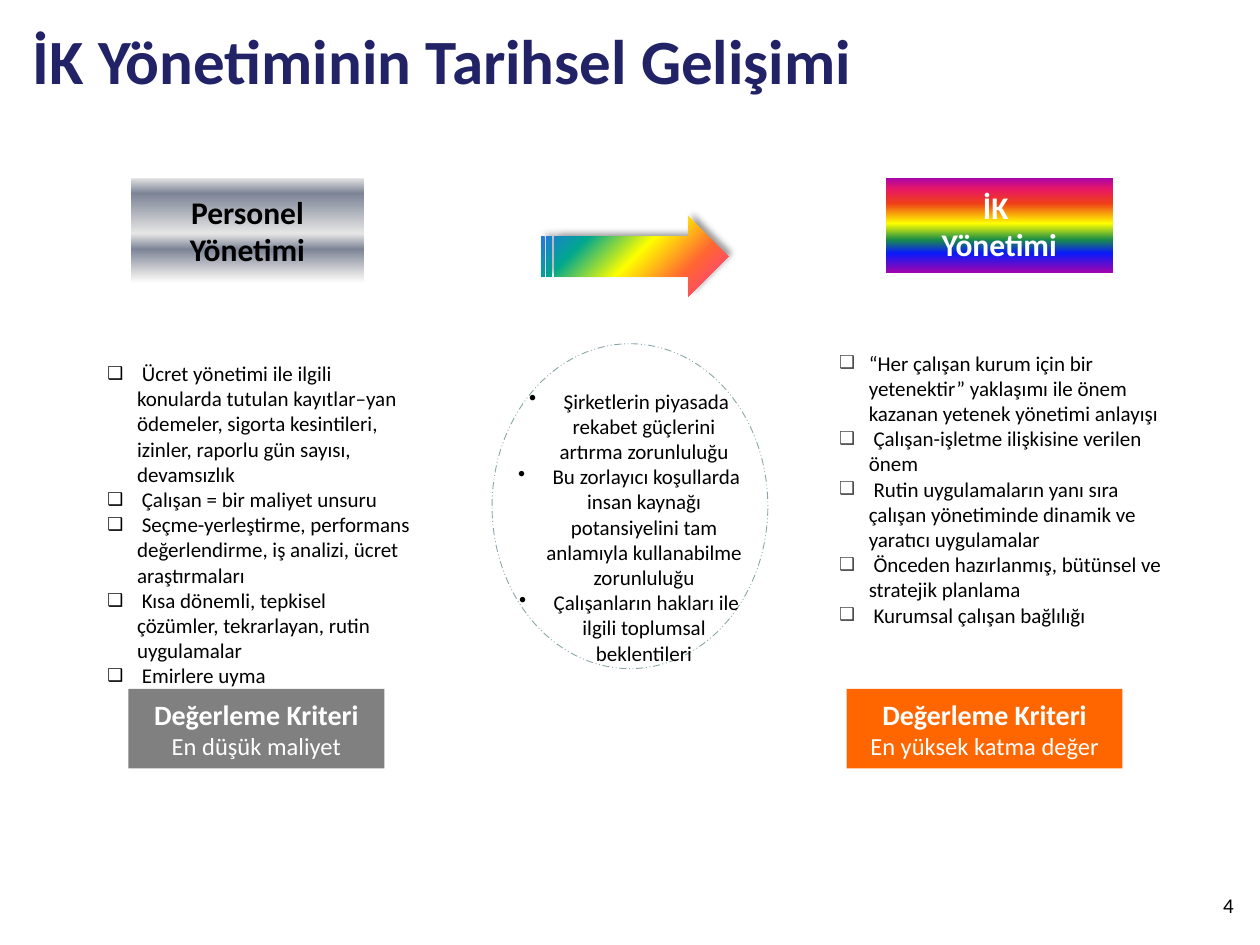
from lxml.etree import SubElement
from pptx import Presentation
from pptx.dml.color import RGBColor
from pptx.enum.dml import MSO_LINE
from pptx.enum.shapes import MSO_SHAPE as Shape
from pptx.enum.text import MSO_ANCHOR as Anchor, MSO_AUTO_SIZE as AutoSize, PP_ALIGN as Align
from pptx.oxml import parse_xml
from pptx.oxml.ns import nsdecls, qn
from pptx.util import Cm, Pt

FONT = "Calibri"
BLACK = RGBColor(0x00, 0x00, 0x00)
WHITE = RGBColor(0xFF, 0xFF, 0xFF)
NAVY = RGBColor(0x22, 0x22, 0x67)
GREY = RGBColor(0x80, 0x80, 0x80)
ORANGE = RGBColor(0xFF, 0x66, 0x00)
SAGE = RGBColor(0x8A, 0xA6, 0xA8)
CHARCOAL = RGBColor(0x40, 0x40, 0x40)

SILVER = [(0, "FFFFFF"), (7, "E6E6E6"), (32, "7D8496"), (47, "E6E6E6"),
          (85, "7D8496"), (100, "E6E6E6")]
RAINBOW = [(0, "A603AB"), (21, "0819FB"), (35, "1A8D48"), (52, "FFFF00"),
           (73, "EE3F17"), (88, "E81766"), (100, "A603AB")]
SUNSET = [(0, "FF3399"), (25, "FF6633"), (50, "FFFF00"), (75, "01A78F"), (100, "3366FF")]
UPWARD = '<a:lin ang="16200000" scaled="0"/>'
FROM_CORNER = '<a:path path="circle"><a:fillToRect l="100000" t="100000"/></a:path>'

# Boxes are (left, top, width, height) in centimetres.
TITLE = ("İK Yönetiminin Tarihsel Gelişimi", (0.41, 0.2, 22.23, 1.98))
HEADINGS = [
    (["Personel Yönetimi"], (2.64, 3.58, 4.7, 2.13), SILVER, BLACK),
    (["İK ", "Yönetimi"], (17.86, 3.58, 4.57, 1.93), RAINBOW, WHITE),
]
ARROW_BOX = (10.92, 4.37, 3.76, 1.6)
OVAL_BOX = (9.92, 6.93, 5.56, 6.55)
PERSONNEL = ([
    " Ücret yönetimi ile ilgili konularda tutulan kayıtlar–yan ödemeler, "
    "sigorta kesintileri, izinler, raporlu gün sayısı, devamsızlık",
    " Çalışan = bir maliyet unsuru",
    " Seçme-yerleştirme, performans değerlendirme, iş analizi, ücret araştırmaları",
    " Kısa dönemli, tepkisel çözümler, tekrarlayan, rutin uygulamalar",
    " Emirlere uyma",
], (1.91, 7.14, 6.63, 5.89), BLACK)
HUMAN_RESOURCES = ([
    "“Her çalışan kurum için bir yetenektir” yaklaşımı ile önem kazanan "
    "yetenek yönetimi anlayışı",
    " Çalışan-işletme ilişkisine verilen önem",
    " Rutin uygulamaların yanı sıra çalışan yönetiminde dinamik ve yaratıcı uygulamalar",
    " Önceden hazırlanmış, bütünsel ve stratejik planlama",
    " Kurumsal çalışan bağlılığı",
], (16.66, 6.93, 7.34, 5.89), CHARCOAL)
PRESSURES = ([
    " Şirketlerin piyasada rekabet güçlerini artırma zorunluluğu",
    " Bu zorlayıcı koşullarda insan kaynağı potansiyelini tam anlamıyla "
    "kullanabilme zorunluluğu",
    " Çalışanların hakları ile ilgili toplumsal beklentileri",
], (10.13, 7.7, 5.11, 5.26))
CRITERION = "Değerleme Kriteri"
CRITERIA = [
    ("En düşük maliyet", (2.59, 13.89, 5.16, 1.6), GREY),
    ("En yüksek katma değer", (17.07, 13.89, 5.56, 1.6), ORANGE),
]
PAGE_NUMBER = ("4", (24.41, 17.86, 0.74, 0.76))


def place(shape, box):
    shape.left, shape.top, shape.width, shape.height = map(Cm, box)


def add_bullet(para, mark, color, percent):
    """Give the paragraph a hanging bullet of the given size and colour."""
    props = para._p.get_or_add_pPr()
    indent = Cm(0.6)
    props.set("marL", str(indent))
    props.set("indent", str(-indent))
    tint = SubElement(props, qn("a:buClr"))
    SubElement(tint, qn("a:srgbClr"), val=str(color))
    SubElement(props, qn("a:buSzPct"), val=str(percent * 1000))
    SubElement(props, qn("a:buChar"), char=mark)


def write(shape, lines, sizes=(12,), bolds=(False,), color=BLACK, align=Align.LEFT,
          anchor=Anchor.TOP, wrap=True, mark=None, mark_color=BLACK, mark_percent=100):
    """Fill the shape, one paragraph a line; sizes and bolds repeat their last value."""
    frame = shape.text_frame
    frame.auto_size = AutoSize.NONE
    frame.word_wrap = wrap
    frame.vertical_anchor = anchor
    for index, line in enumerate(lines):
        para = frame.add_paragraph() if index else frame.paragraphs[0]
        para.alignment = align
        para.space_before = Pt(0)
        if mark:
            add_bullet(para, mark, mark_color, mark_percent)
        span = para.add_run()
        span.text = line
        span.font.name = FONT
        span.font.size = Pt(sizes[min(index, len(sizes) - 1)])
        span.font.bold = bolds[min(index, len(bolds) - 1)]
        span.font.color.rgb = color


def add_plain_shape(page, kind, box, fill=None):
    shape = page.shapes.add_shape(kind, *map(Cm, box))
    shape.shadow.inherit = False
    shape.line.fill.background()
    if fill is not None:
        shape.fill.solid()
        shape.fill.fore_color.rgb = fill
    return shape


def fill_gradient(shape, stops, direction):
    marks = "".join(f'<a:gs pos="{position * 1000}"><a:srgbClr val="{color}"/></a:gs>'
                    for position, color in stops)
    gradient = parse_xml(f'<a:gradFill {nsdecls("a")} rotWithShape="1">'
                         f'<a:gsLst>{marks}</a:gsLst>{direction}</a:gradFill>')
    shape._element.spPr.find(qn("a:prstGeom")).addnext(gradient)


def add_shadow(shape):
    effects = shape._element.spPr.find(qn("a:effectLst"))
    shadow = SubElement(effects, qn("a:outerShdw"), blurRad=str(Pt(4)), dist=str(Pt(3)),
                        dir=str(315 * 60000), algn="bl", rotWithShape="0")
    tint = SubElement(shadow, qn("a:srgbClr"), val=str(BLACK))
    SubElement(tint, qn("a:alpha"), val="40000")


def main():
    deck = Presentation()
    deck.slide_width, deck.slide_height = Cm(25.4), Cm(19.05)
    page = deck.slides.add_slide(deck.slide_layouts.get_by_name("Two Content"))
    title, left_list, right_list = page.placeholders

    text, box = TITLE
    place(title, box)
    write(title, [text], sizes=(36,), bolds=(True,), color=NAVY, anchor=Anchor.MIDDLE)

    for holder, (lines, box, mark_color) in ((left_list, PERSONNEL),
                                             (right_list, HUMAN_RESOURCES)):
        place(holder, box)
        write(holder, lines, mark="❑", mark_color=mark_color, mark_percent=85)

    for lines, box, stops, color in HEADINGS:
        heading = add_plain_shape(page, Shape.RECTANGLE, box)
        fill_gradient(heading, stops, UPWARD)
        write(heading, lines, sizes=(18,), bolds=(True,), color=color,
              align=Align.CENTER, anchor=Anchor.MIDDLE)

    arrow = add_plain_shape(page, Shape.STRIPED_RIGHT_ARROW, ARROW_BOX)
    fill_gradient(arrow, SUNSET, FROM_CORNER)
    add_shadow(arrow)

    oval = add_plain_shape(page, Shape.OVAL, OVAL_BOX, WHITE)
    oval.line.color.rgb = SAGE
    oval.line.width = Pt(0.5)
    oval.line.dash_style = MSO_LINE.DASH_DOT_DOT
    lines, box = PRESSURES
    write(page.shapes.add_textbox(*map(Cm, box)), lines, align=Align.CENTER, mark="•")

    for text, box, fill in CRITERIA:
        write(add_plain_shape(page, Shape.RECTANGLE, box, fill), [CRITERION, text],
              sizes=(16, 14), bolds=(True, False), color=WHITE,
              align=Align.CENTER, anchor=Anchor.MIDDLE)

    text, box = PAGE_NUMBER
    write(page.shapes.add_textbox(*map(Cm, box)), [text], wrap=False)
    deck.save("out.pptx")


if __name__ == "__main__":
    main()
